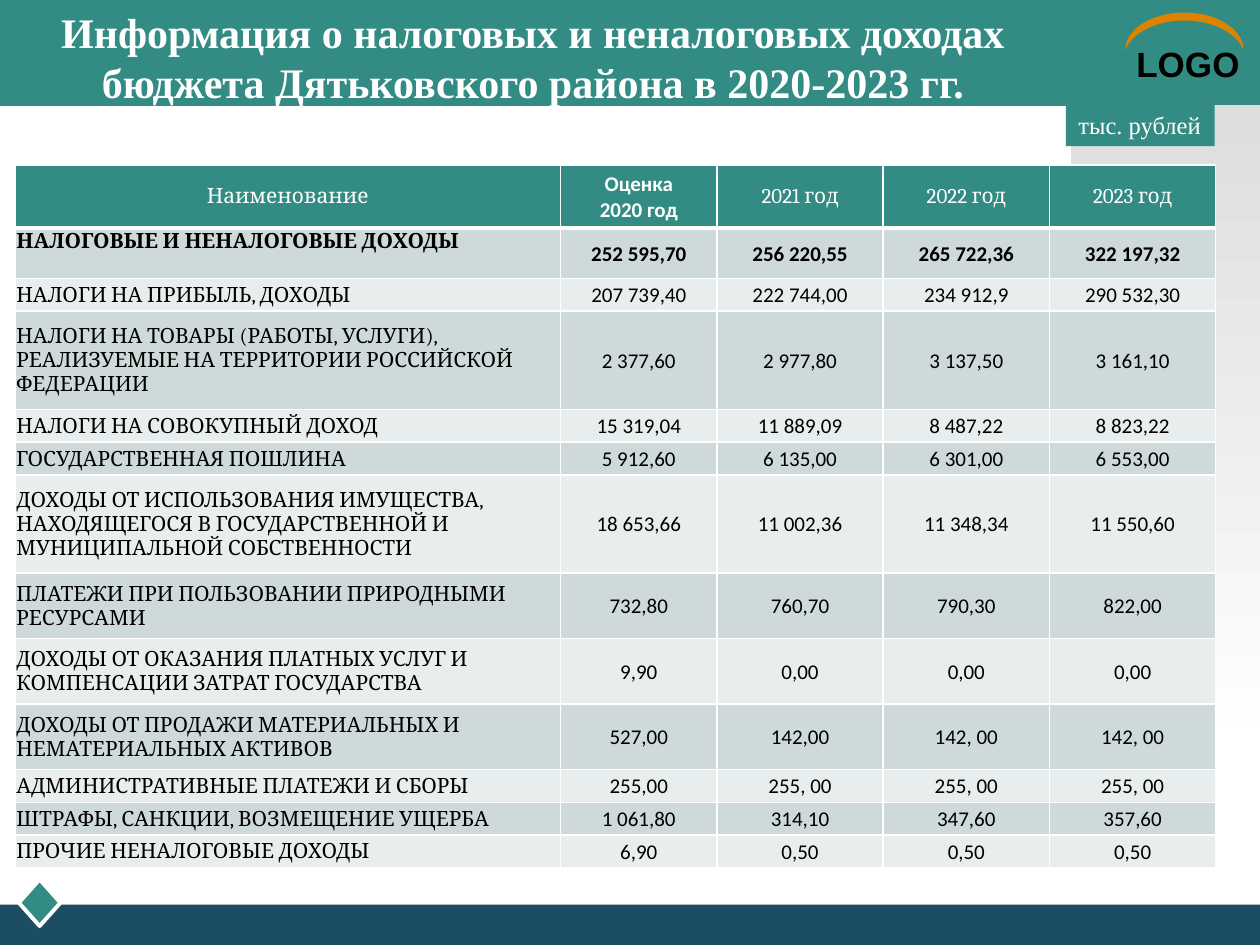
from dataclasses import dataclass

from lxml import etree
from pptx import Presentation
from pptx.dml.color import RGBColor
from pptx.enum.shapes import MSO_SHAPE
from pptx.enum.text import MSO_ANCHOR, PP_ALIGN
from pptx.oxml.ns import qn
from pptx.util import Inches, Pt

RECT, DIAMOND, MOON = MSO_SHAPE.RECTANGLE, MSO_SHAPE.DIAMOND, MSO_SHAPE.MOON
LEFT, CENTER = PP_ALIGN.LEFT, PP_ALIGN.CENTER
TOP, MIDDLE = MSO_ANCHOR.TOP, MSO_ANCHOR.MIDDLE


@dataclass(frozen=True)
class Theme:
    teal: str = "328C83"
    navy: str = "1B4E63"
    orange: str = "DC8300"
    grey: str = "DDDDDD"
    white: str = "FFFFFF"
    black: str = "000000"
    bands: tuple = ("CEDAD9", "E8EEED")
    serif: str = "Times New Roman"
    label: str = "Cambria"
    number: str = "Calibri"
    logo: str = "Arial"
    title_size: int = 24
    logo_size: int = 20
    unit_size: int = 14
    table_size: int = 12


THEME = Theme()
COLUMN_WIDTHS = [4.33, 1.24, 1.32, 1.32, 1.32]
HEADER_HEIGHT = 0.5
HEADER = ["Наименование", "Оценка\v2020 год", "2021 год", "2022 год", "2023 год"]
# Row height, name of the income, amounts by year
INCOME = [
    (0.4, "НАЛОГОВЫЕ И НЕНАЛОГОВЫЕ ДОХОДЫ",
     "252 595,70", "256 220,55", "265 722,36", "322 197,32"),
    (0.26, "НАЛОГИ НА ПРИБЫЛЬ, ДОХОДЫ",
     "207 739,40", "222 744,00", "234 912,9", "290 532,30"),
    (0.78, "НАЛОГИ НА ТОВАРЫ (РАБОТЫ, УСЛУГИ), РЕАЛИЗУЕМЫЕ НА ТЕРРИТОРИИ РОССИЙСКОЙ ФЕДЕРАЦИИ",
     "2 377,60", "2 977,80", "3 137,50", "3 161,10"),
    (0.26, "НАЛОГИ НА СОВОКУПНЫЙ ДОХОД",
     "15 319,04", "11 889,09", "8 487,22", "8 823,22"),
    (0.26, "ГОСУДАРСТВЕННАЯ ПОШЛИНА",
     "5 912,60", "6 135,00", "6 301,00", "6 553,00"),
    (0.78, "ДОХОДЫ ОТ ИСПОЛЬЗОВАНИЯ ИМУЩЕСТВА, НАХОДЯЩЕГОСЯ В ГОСУДАРСТВЕННОЙ И "
           "МУНИЦИПАЛЬНОЙ СОБСТВЕННОСТИ",
     "18 653,66", "11 002,36", "11 348,34", "11 550,60"),
    (0.52, "ПЛАТЕЖИ ПРИ ПОЛЬЗОВАНИИ ПРИРОДНЫМИ РЕСУРСАМИ",
     "732,80", "760,70", "790,30", "822,00"),
    (0.52, "ДОХОДЫ ОТ ОКАЗАНИЯ ПЛАТНЫХ УСЛУГ И КОМПЕНСАЦИИ ЗАТРАТ ГОСУДАРСТВА",
     "9,90", "0,00", "0,00", "0,00"),
    (0.52, "ДОХОДЫ ОТ ПРОДАЖИ МАТЕРИАЛЬНЫХ И НЕМАТЕРИАЛЬНЫХ АКТИВОВ",
     "527,00", "142,00", "142, 00", "142, 00"),
    (0.26, "АДМИНИСТРАТИВНЫЕ ПЛАТЕЖИ И СБОРЫ",
     "255,00", "255, 00", "255, 00", "255, 00"),
    (0.26, "ШТРАФЫ, САНКЦИИ, ВОЗМЕЩЕНИЕ УЩЕРБА",
     "1 061,80", "314,10", "347,60", "357,60"),
    (0.26, "ПРОЧИЕ НЕНАЛОГОВЫЕ ДОХОДЫ",
     "6,90", "0,50", "0,50", "0,50"),
]


def rgb(value):
    return RGBColor.from_string(value)


def inches(box):
    return [Inches(length) for length in box]


def write(frame, text, *, font, size, color, bold=False, align=LEFT):
    frame.text = text
    for paragraph in frame.paragraphs:
        paragraph.alignment = align
        for run in paragraph.runs:
            run.font.name = font
            run.font.size = Pt(size)
            run.font.bold = bold
            run.font.color.rgb = rgb(color)


def add_block(slide, kind, box, fill, outline=None):
    block = slide.shapes.add_shape(kind, *inches(box))
    block.shadow.inherit = False
    block.fill.solid()
    block.fill.fore_color.rgb = rgb(fill)
    if outline:
        block.line.color.rgb = rgb(outline)
        block.line.width = Pt(2.25)
    else:
        block.line.fill.background()
    return block


def add_text(slide, box, text, **style):
    frame = slide.shapes.add_textbox(*inches(box)).text_frame
    frame.word_wrap = True
    write(frame, text, **style)


def add_logo_placeholder(slide, box):
    left, top, width, height = box
    add_text(slide, (left, top + 0.22, width, height - 0.22), "LOGO", font=THEME.logo,
             size=THEME.logo_size, color=THEME.black, bold=True)
    arc = add_block(slide, MOON, (left + 0.33, top - 0.29, 0.3, 0.94), THEME.orange)
    arc.rotation = 90
    arc.adjustments[0] = 0.21


def add_side_panel(slide, box):
    panel = add_block(slide, RECT, box, THEME.grey)
    panel.fill.gradient()
    panel.fill.gradient_angle = 270
    for stop, color, position in zip(panel.fill.gradient_stops,
                                     (THEME.grey, THEME.white), (0, 1)):
        stop.color.rgb = rgb(color)
        stop.position = position


def add_footer(slide, box):
    left, top, _, _ = box
    add_block(slide, RECT, box, THEME.navy)
    add_block(slide, DIAMOND, (left + 0.15, top - 0.2, 0.33, 0.37), THEME.teal, THEME.white)


def add_unit_tag(slide, box):
    frame = add_block(slide, RECT, box, THEME.teal).text_frame
    frame.word_wrap = False
    write(frame, "тыс. рублей", font=THEME.serif, size=THEME.unit_size, color=THEME.white)


def set_borders(cell, bottom):
    properties = cell._tc.get_or_add_tcPr()
    for side, points in (("L", 1), ("R", 1), ("T", 1), ("B", bottom)):
        line = etree.SubElement(properties, qn(f"a:ln{side}"), w=str(Pt(points)))
        solid = etree.SubElement(line, qn("a:solidFill"))
        etree.SubElement(solid, qn("a:srgbClr"), val=THEME.white)


def fill_cell(cell, text, fill, *, anchor=MIDDLE, bottom=1, **style):
    cell.margin_left = cell.margin_right = cell.margin_top = Inches(0.01)
    cell.margin_bottom = 0
    cell.vertical_anchor = anchor
    set_borders(cell, bottom)
    cell.fill.solid()
    cell.fill.fore_color.rgb = rgb(fill)
    write(cell.text_frame, text, size=THEME.table_size, **style)


def add_income_table(slide, box):
    table = slide.shapes.add_table(len(INCOME) + 1, len(HEADER), *inches(box)).table
    for column, width in zip(table.columns, COLUMN_WIDTHS):
        column.width = Inches(width)
    heights = [HEADER_HEIGHT] + [row[0] for row in INCOME]
    for row, height in zip(table.rows, heights):
        row.height = Inches(height)

    for c, heading in enumerate(HEADER):
        estimate = c == 1
        fill_cell(table.cell(0, c), heading, THEME.teal, bottom=3, bold=estimate,
                  font=THEME.number if estimate else THEME.label,
                  color=THEME.white, align=CENTER)

    for r, (_, name, *amounts) in enumerate(INCOME):
        total = r == 0
        band = THEME.bands[r % 2]
        fill_cell(table.cell(r + 1, 0), name, band, anchor=TOP if total else MIDDLE,
                  font=THEME.label, color=THEME.black, bold=total)
        for c, amount in enumerate(amounts, start=1):
            fill_cell(table.cell(r + 1, c), amount, band, font=THEME.number,
                      color=THEME.black, bold=total, align=CENTER)


def main():
    presentation = Presentation()
    presentation.slide_width, presentation.slide_height = Inches(10), Inches(7.5)
    slide = presentation.slides.add_slide(presentation.slide_layouts[6])

    add_block(slide, RECT, (0, 0, 10, 0.84), THEME.teal)
    add_footer(slide, (0, 7.18, 10, 0.32))
    add_logo_placeholder(slide, (8.92, 0.07, 1.08, 0.65))
    add_side_panel(slide, (8.5, 0.83, 1.5, 5.25))
    add_text(slide, (0, 0, 8.46, 0.91),
             "Информация о налоговых и неналоговых доходах "
             "бюджета Дятьковского района в 2020-2023 гг.",
             font=THEME.serif, size=THEME.title_size, color=THEME.white,
             bold=True, align=CENTER)
    add_unit_tag(slide, (8.46, 0.82, 1.18, 0.34))
    add_income_table(slide, (0.12, 1.31, 9.53, 5.58))
    presentation.save("out.pptx")


if __name__ == "__main__":
    main()
